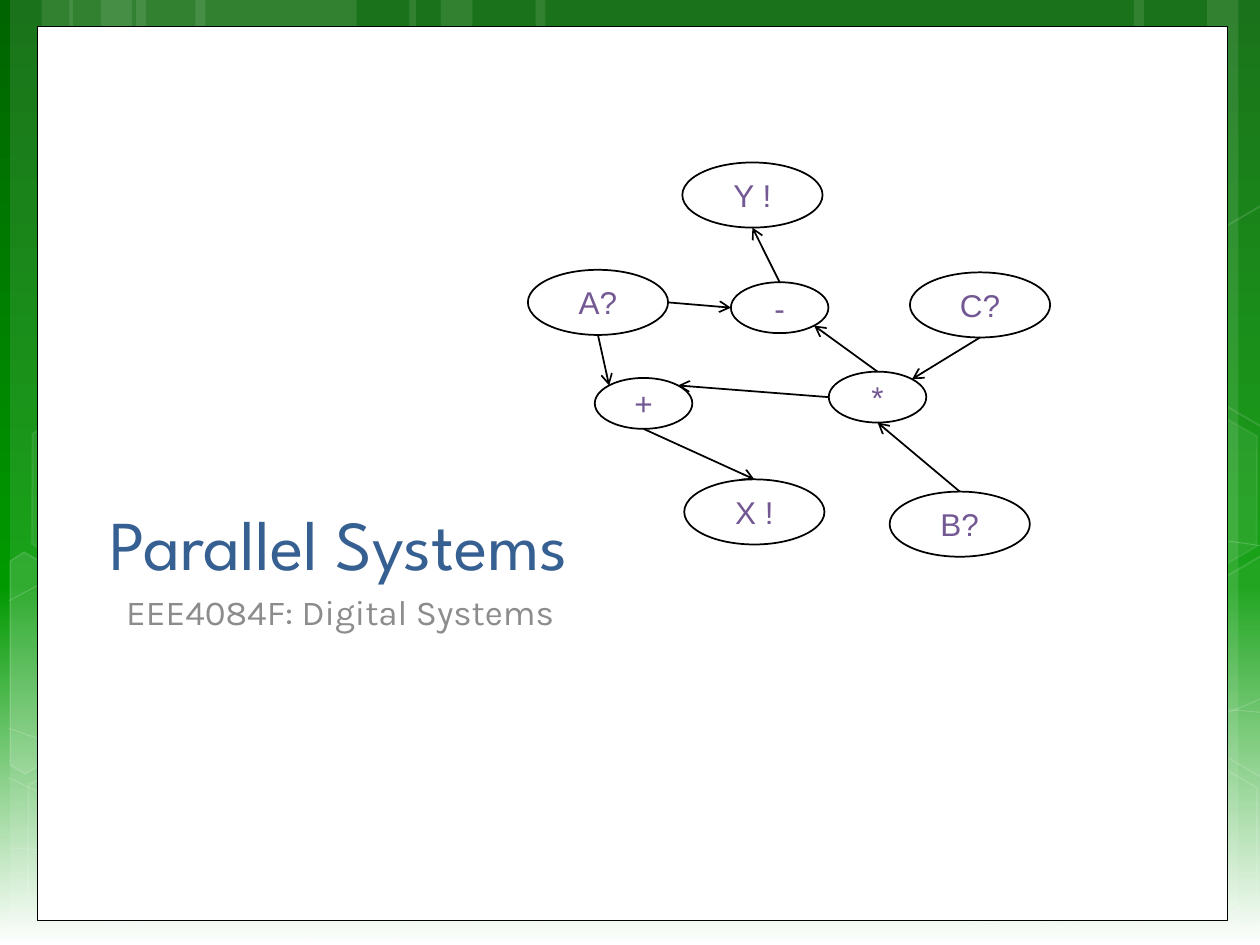
from copy import deepcopy
from dataclasses import dataclass
from math import cos, radians, sin

from lxml.etree import SubElement
from pptx import Presentation
from pptx.dml.color import RGBColor
from pptx.enum.shapes import MSO_CONNECTOR, MSO_SHAPE
from pptx.enum.text import MSO_ANCHOR, MSO_AUTO_SIZE, PP_ALIGN
from pptx.oxml.ns import qn
from pptx.util import Inches, Pt


@dataclass(frozen=True)
class Theme:
    white: str = "FFFFFF"
    black: str = "000000"
    title: str = "376092"
    subtitle: str = "8C8C8C"
    label: str = "735893"
    backdrop: tuple = ((0, "006400"), (0.62, "009900"), (1, "FFFFFF"))
    title_font: str = "League Spartan"
    subtitle_font: str = "Karla"
    label_font: str = "Arial"
    title_size: int = 40
    subtitle_size: int = 20
    label_size: int = 18


THEME = Theme()
COLUMNS, ROWS = 100, 75  # square grid cells, ten to the inch
TILT = 30  # degrees, for every hexagon

# Vertical bands: left, width
BANDS = [(10.8, 17.5), (0.8, 5), (3.3, 8.3), (15.5, 17.5), (5.5, 5), (8, 8.3),
         (73.3, 17.5), (95.8, 5), (90, 8.3), (42.5, 30.8), (32.5, 5), (35, 8.3)]

# Curves: a start point, then Bezier segments of three points each
CURVES = [
    [(0.7, 67.3), (6.1, 67.6), (11.5, 67.9), (19, 67.8), (26.5, 67.7), (35.8, 67.5), (45.8, 66.5),
     (55.8, 65.5), (70, 63.6), (79.2, 61.7), (88.3, 59.8), (97.7, 56.8), (100.7, 55.1)],
    [(0.7, 47.7), (3.6, 46.1), (6.5, 44.6), (12.1, 43.1), (17.8, 41.6), (25.9, 39.4), (34.7, 38.7),
     (43.6, 38), (54.4, 37.9), (65.4, 38.7), (76.4, 39.5), (94.7, 42.6), (100.7, 43.4)],
    [(0.6, 61.7), (12.7, 67.2), (24.7, 72.7), (33.4, 74.9)],
    [(0.7, 57.8), (3.8, 58.9), (7, 60), (12.8, 61.6), (18.6, 63.1), (27.3, 65.6), (35.7, 67.3),
     (44, 69), (54.5, 70.8), (62.8, 71.8), (71.1, 72.9), (80, 73.3), (85.3, 73.6),
     (90.5, 74), (91.9, 73.8), (94.5, 73.8), (97.1, 73.7), (98.9, 73.5), (100.7, 73.4)],
    [(24.2, 74.9), (26, 72.9), (27.8, 70.9), (30.2, 69.1), (32.6, 67.3), (36, 65.3), (38.8, 63.9),
     (41.6, 62.5), (43.3, 61.9), (47, 60.9), (50.6, 59.9), (57.3, 58.5), (60.8, 57.8),
     (64.4, 57.1), (64.9, 57.1), (68, 56.9), (71.1, 56.6), (76, 56.3), (79.4, 56.2),
     (82.9, 56.1), (88.6, 56.2), (88.6, 56.2), (91, 56.2), (93, 56.2), (95.3, 56.2),
     (97.1, 56.3), (98.8, 56.4), (100.6, 56.6)],
]

# Hexagons: left, top, fill opacity, line opacity
HEXAGONS = [(49.7, 58.9, 6, 12), (1.1, 59.1, 0, 12), (1.4, 31.2, 7, 8),
            (17.4, 59.2, 0, 12), (83.4, 59.3, 0, 12), (83.4, 31.4, 7, 8)]

# Hexagons cut by the slide's edge: fill opacity, centre, corners
CUT_HEXAGONS = [
    (10, (3.6, 53.5),
     [(0.8, 44.5), (1.9, 43.8), (9.6, 48.2), (9.5, 57), (2, 61.4), (0.8, 60.7)]),
    (4, (98.5, 52),
     [(92.6, 48.5), (100.1, 44.1), (100.9, 44.6), (100.9, 61.3), (100.2, 61.7), (92.6, 57.3)]),
    (0, (98.5, 24.1),
     [(92.6, 20.7), (100.1, 16.3), (101, 16.8), (100.9, 33.5), (100.2, 33.9), (92.6, 29.5)]),
]

# Graph nodes: label -> centre, size
VALUE, OPERATOR = (11.13, 5.17), (7.74, 4.04)
NODES = {
    "A?": ((47.46, 24), VALUE), "B?": ((76.17, 41.6), VALUE), "C?": ((77.78, 24.2), VALUE),
    "X !": ((59.87, 40.63), VALUE), "Y !": ((59.72, 15.48), VALUE),
    "+": ((51.08, 32.02), OPERATOR), "*": ((69.65, 31.52), OPERATOR),
    "-": ((61.88, 24.42), OPERATOR),
}

# Points on an ellipse, in degrees clockwise from the right
RIGHT, LOWER_RIGHT, BOTTOM, LEFT, UPPER_LEFT, TOP, UPPER_RIGHT = 0, 45, 90, 180, 225, 270, 315
EDGES = [("A?", BOTTOM, "+", UPPER_LEFT), ("*", LEFT, "+", UPPER_RIGHT),
         ("B?", TOP, "*", BOTTOM), ("C?", BOTTOM, "*", UPPER_RIGHT),
         ("+", BOTTOM, "X !", TOP), ("*", TOP, "-", LOWER_RIGHT),
         ("A?", RIGHT, "-", LEFT), ("-", TOP, "Y !", BOTTOM)]


def cells(*counts):
    return [Inches(count / 10) for count in counts]


def paint(fill, color, opacity=100):
    """Fill with one colour, or clear the fill when opacity is zero."""
    if not opacity:
        fill.background()
        return
    fill.solid()
    fill.fore_color.rgb = RGBColor.from_string(color)
    if opacity < 100:
        solid = fill._xPr.find(qn("a:solidFill"))
        SubElement(solid[0], qn("a:alpha")).set("val", str(opacity * 1000))


def style(shape, fill_opacity, line_color=THEME.white, line_width=1, line_opacity=100):
    shape.shadow.inherit = False
    paint(shape.fill, THEME.white, fill_opacity)
    paint(shape.line.fill, line_color, line_opacity)
    if line_opacity:
        shape.line.width = Pt(line_width)


def write(frame, text, font, size, color):
    frame.text = text
    frame.auto_size = MSO_AUTO_SIZE.NONE
    para = frame.paragraphs[0]
    para.font.name, para.font.size = font, Pt(size)
    para.font.color.rgb = RGBColor.from_string(color)
    return para


def add_backdrop(page):
    fill = page.background.fill
    fill.gradient()
    fill.gradient_angle = 270
    last = fill.gradient_stops[-1]._gs
    last.addnext(deepcopy(last))
    for stop, (position, color) in zip(fill.gradient_stops, THEME.backdrop):
        stop.position = position
        stop.color.rgb = RGBColor.from_string(color)


def add_outline(group, points, close):
    corners = [cells(*point) for point in points]
    builder = group.shapes.build_freeform(*corners[0])
    builder.add_line_segments(corners[1:], close=close)
    return builder.convert_to_shape()


def add_curve(group, knots):
    """Draw an outline through the knots, then turn each three lines into one Bezier."""
    curve = add_outline(group, knots, False)
    lines = list(curve._element.iter(qn("a:lnTo")))
    for first in range(0, len(lines), 3):
        segment = SubElement(lines[first].getparent(), qn("a:cubicBezTo"))
        for line in lines[first:first + 3]:
            segment.append(line[0])
            line.getparent().remove(line)
    return curve


def turn_back(point, center):
    """Undo the tilt, so that the shape's own rotation can restore it."""
    x, y = point[0] - center[0], point[1] - center[1]
    cosine, sine = cos(radians(TILT)), sin(radians(TILT))
    return center[0] + x * cosine + y * sine, center[1] - x * sine + y * cosine


def add_decoration(page):
    group = page.shapes.add_group_shape()
    for left, width in BANDS:
        band = group.shapes.add_shape(MSO_SHAPE.RECTANGLE, *cells(left, 0, width, ROWS))
        style(band, 10, line_opacity=0)
    for knots in CURVES:
        style(add_curve(group, knots), 0, line_width=0.5, line_opacity=20)
    for left, top, fill_opacity, line_opacity in HEXAGONS:
        hexagon = group.shapes.add_shape(MSO_SHAPE.HEXAGON, *cells(left, top, 17.5, 15.2))
        hexagon.adjustments[0] = 0.285
        hexagon.rotation = TILT
        style(hexagon, fill_opacity, line_opacity=line_opacity)
    for fill_opacity, center, corners in CUT_HEXAGONS:
        part = add_outline(group, [turn_back(corner, center) for corner in corners], True)
        part.rotation = TILT
        style(part, fill_opacity, line_opacity=12)
    panel = page.shapes.add_shape(MSO_SHAPE.RECTANGLE, *cells(3, 2.1, 94.4, 70.95))
    style(panel, 100, THEME.black, 0.5)
    # The decoration belongs to the layout, behind its placeholders
    tree = page.slide_layout.shapes._spTree
    for position, shape in enumerate((group, panel), start=2):
        tree.insert(position, shape._element)


def add_headings(page):
    title = page.shapes.title
    title.left, title.top, title.width, title.height = cells(7.7, 32, 72.6, 14.9)
    para = write(title.text_frame, "Parallel Systems",
                 THEME.title_font, THEME.title_size, THEME.title)
    para.alignment = PP_ALIGN.LEFT
    title.text_frame.vertical_anchor = MSO_ANCHOR.BOTTOM

    box = page.shapes.add_textbox(*cells(9.04, 46.4, 72.6, 16.6))
    para = write(box.text_frame, "EEE4084F: Digital Systems",
                 THEME.subtitle_font, THEME.subtitle_size, THEME.subtitle)
    para.space_before = Pt(4)
    box.text_frame.word_wrap = True


def add_node(group, label, center, size):
    (x, y), (width, height) = center, size
    node = group.shapes.add_shape(MSO_SHAPE.OVAL,
                                  *cells(x - width / 2, y - height / 2, width, height))
    style(node, 0, THEME.black)
    para = write(node.text_frame, label, THEME.label_font, THEME.label_size, THEME.label)
    para.alignment = PP_ALIGN.CENTER
    node.text_frame.vertical_anchor = MSO_ANCHOR.MIDDLE
    node.text_frame.word_wrap = False


def rim_point(label, angle):
    (x, y), (width, height) = NODES[label]
    return cells(x + width / 2 * cos(radians(angle)), y + height / 2 * sin(radians(angle)))


def add_arrow(group, source, source_angle, target, target_angle):
    ends = rim_point(source, source_angle) + rim_point(target, target_angle)
    arrow = group.shapes.add_connector(MSO_CONNECTOR.STRAIGHT, *ends)
    paint(arrow.line.fill, THEME.black)
    arrow.line.width = Pt(1)
    SubElement(arrow.line._get_or_add_ln(), qn("a:tailEnd")).set("type", "arrow")
    SubElement(arrow._element.spPr, qn("a:effectLst"))


def main():
    deck = Presentation()
    deck.slide_width, deck.slide_height = cells(COLUMNS, ROWS)
    page = deck.slides.add_slide(deck.slide_layouts.get_by_name("Title Only"))
    add_backdrop(page)
    add_decoration(page)
    add_headings(page)
    # Data-flow graph
    graph = page.shapes.add_group_shape()
    for label, (center, size) in NODES.items():
        add_node(graph, label, center, size)
    for edge in EDGES:
        add_arrow(graph, *edge)
    deck.save("out.pptx")


if __name__ == "__main__":
    main()
